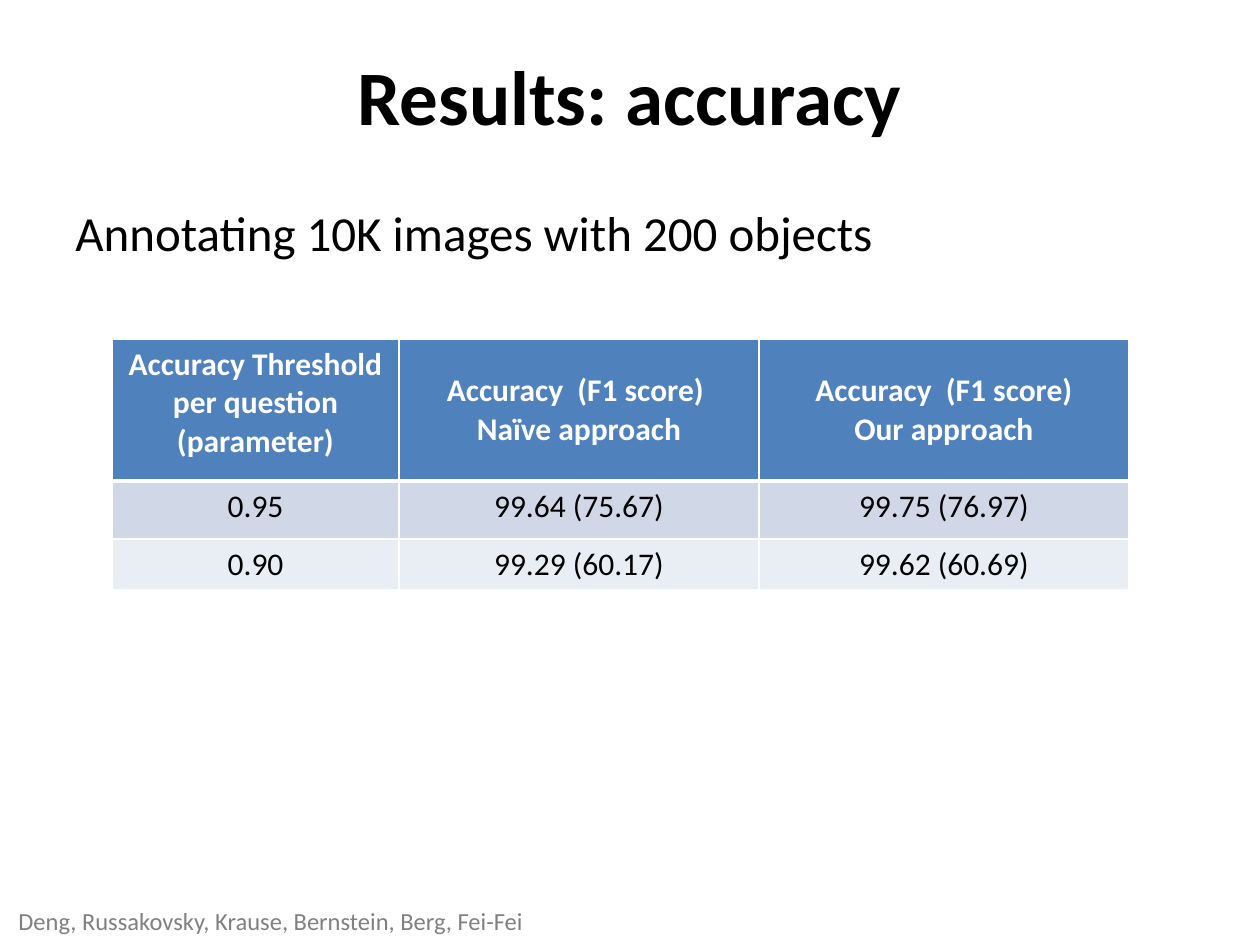
from lxml import etree
from pptx import Presentation
from pptx import util as u
from pptx.dml.color import RGBColor
from pptx.enum import text
from pptx.oxml import ns

# Content: text, box (left, top, width, height), size, colour, bold, alignment, anchor
LEFT, CENTER = text.PP_ALIGN.LEFT, text.PP_ALIGN.CENTER
TOP, MIDDLE = text.MSO_ANCHOR.TOP, text.MSO_ANCHOR.MIDDLE
TEXTS = [
    ("Deng, Russakovsky, Krause, Bernstein, Berg, Fei-Fei",
     (6, 900, 548, 43), 14, "grey", False, LEFT, TOP),
    ("Results: accuracy", (63, 16, 1134, 158), 44, "black", True, CENTER, MIDDLE),
    ("Annotating 10K images with 200 objects",
     (63, 196, 1134, 76), 28, "black", False, LEFT, TOP),
]
ROWS = [
    ("Accuracy Threshold per question (parameter)",
     "Accuracy  (F1 score) \nNaïve approach",
     "Accuracy  (F1 score)\nOur approach"),
    ("0.95", "99.64 (75.67)", "99.75 (76.97)"),
    ("0.90", "99.29 (60.17)", "99.62 (60.69)"),
]
TABLE_LEFT, TABLE_TOP = 112, 339
COLUMN_WIDTHS = [287, 360, 370]
ROW_HEIGHTS = [142, 58, 51]
ROW_FILLS = ["blue", "band", "pale"]
COLORS = {"black": "000000", "grey": "808080", "white": "FFFFFF",
          "blue": "4F81BD", "band": "D0D8E8", "pale": "E9EDF4"}
FONT = "Calibri"


def px(length):
    return u.Emu(round(length * 914400 / 126))


def rgb(name):
    return RGBColor.from_string(COLORS[name])


def write(text_frame, content, size, color, bold, alignment):
    text_frame.text = content
    for paragraph in text_frame.paragraphs:
        paragraph.alignment = alignment
        for run in paragraph.runs:
            run.font.name = FONT
            run.font.size = u.Pt(size)
            run.font.bold = bold
            run.font.color.rgb = rgb(color)


def add_borders(cell, widths):
    properties = cell._tc.get_or_add_tcPr()
    for index, (side, width) in enumerate(widths.items()):
        line = etree.Element(ns.qn("a:" + side), w=str(u.Pt(width)))
        fill = etree.SubElement(line, ns.qn("a:solidFill"))
        etree.SubElement(fill, ns.qn("a:srgbClr"), val=COLORS["white"])
        properties.insert(index, line)


presentation = Presentation()
presentation.slide_width, presentation.slide_height = px(1260), px(945)
slide = presentation.slides.add_slide(presentation.slide_layouts[6])

# Title, subtitle and authors
for content, box, size, color, bold, alignment, anchor in TEXTS:
    frame = slide.shapes.add_textbox(*map(px, box)).text_frame
    frame.word_wrap = True
    frame.vertical_anchor = anchor
    write(frame, content, size, color, bold, alignment)

# Accuracy table
table = slide.shapes.add_table(
    len(ROWS), len(COLUMN_WIDTHS), px(TABLE_LEFT), px(TABLE_TOP),
    px(sum(COLUMN_WIDTHS)), px(sum(ROW_HEIGHTS))).table
for column, width in zip(table.columns, COLUMN_WIDTHS):
    column.width = px(width)
for r, (row, height) in enumerate(zip(ROWS, ROW_HEIGHTS)):
    table.rows[r].height = px(height)
    header = r == 0
    for c, content in enumerate(row):
        cell = table.cell(r, c)
        cell.fill.solid()
        cell.fill.fore_color.rgb = rgb(ROW_FILLS[r])
        cell.vertical_anchor = MIDDLE if header and c > 0 else TOP
        write(cell.text_frame, content, 18, "white" if header else "black", header, CENTER)
        add_borders(cell, {"lnL": 1, "lnR": 1, "lnT": 3 if r == 1 else 1,
                           "lnB": 3 if header else 1})

presentation.save("out.pptx")
